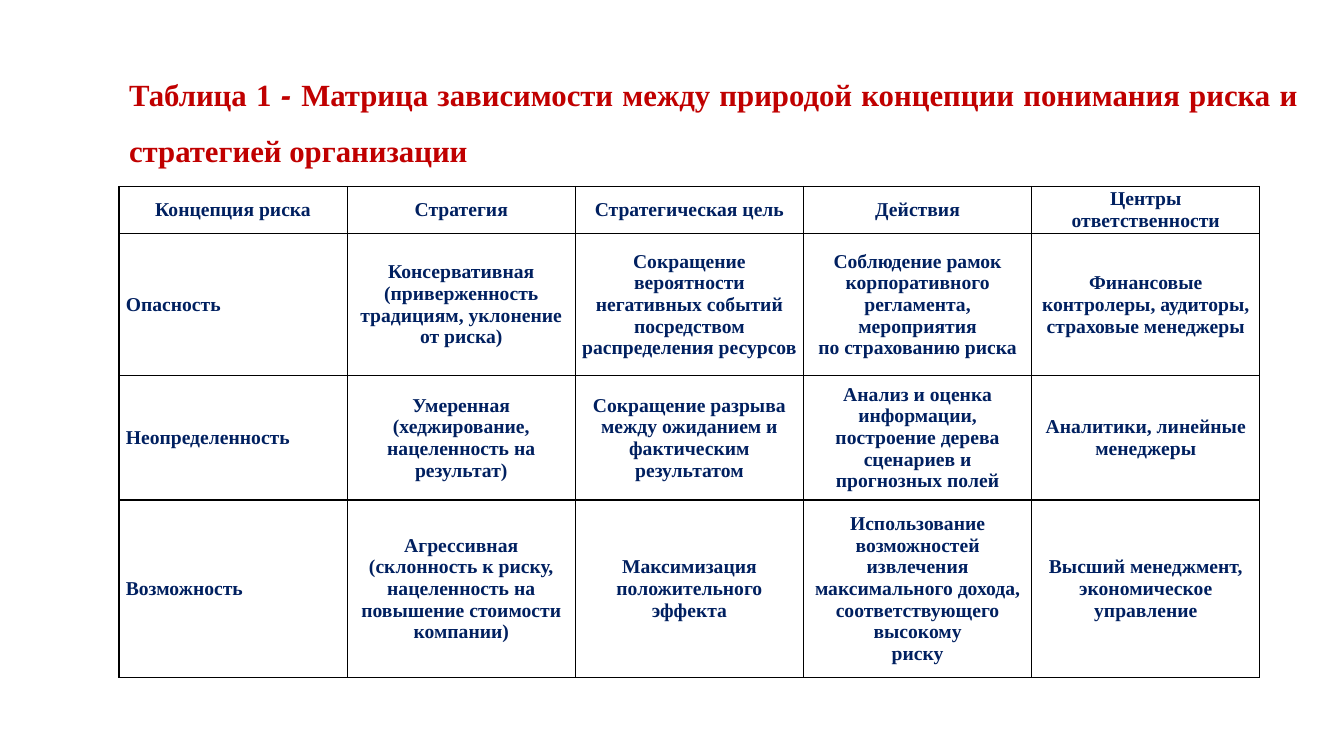
import pptx
import pptx.dml.color
import pptx.enum.text
import pptx.oxml.ns
import pptx.util
from lxml import etree
from pptx.util import Cm

SERIF = "Times New Roman"
RED, NAVY, BLACK = "C00000", "002060", "000000"

TITLE = [
    ("Таблица 1 ", {}),
    ("- ", {"font": "Arial", "italic": True}),
    ("Матрица зависимости между природой концепции понимания риска и стратегией организации", {}),
]

ROWS = [
    ["Концепция риска", "Стратегия", "Стратегическая цель", "Действия", "Центры ответственности"],
    [
        "Опасность",
        "Консервативная\n(приверженность традициям, уклонение от риска)",
        "Сокращение вероятности негативных событий посредством распределения ресурсов",
        "Соблюдение рамок корпоративного регламента, мероприятия\nпо страхованию риска",
        "Финансовые контролеры, аудиторы,\nстраховые менеджеры",
    ],
    [
        "Неопределенность",
        "Умеренная\n(хеджирование, нацеленность на результат)",
        "Сокращение разрыва между ожиданием и фактическим\nрезультатом",
        "Анализ и оценка информации, построение дерева сценариев и прогнозных полей",
        "Аналитики, линейные менеджеры",
    ],
    [
        "Возможность",
        "Агрессивная (склонность к риску, нацеленность на повышение стоимости компании)",
        "Максимизация положительного эффекта",
        "Использование возможностей извлечения максимального дохода,\n"
        "соответствующего высокому\nриску",
        "Высший менеджмент, экономическое управление",
    ],
]

LEFT, TABLE_TOP = Cm(3), Cm(4.7)
COLUMN_WIDTH = Cm(5.75)
ROW_HEIGHTS = [Cm(1.19), Cm(3.58), Cm(3.13), Cm(4.48)]


def color(value):
    return pptx.dml.color.RGBColor.from_string(value)


def add_text(paragraph, text, size=14, fill=NAVY, font=SERIF, italic=False):
    run = paragraph.add_run()
    run.text = text
    run.font.name = font
    run.font.size = pptx.util.Pt(size)
    run.font.bold = True
    run.font.italic = italic
    run.font.color.rgb = color(fill)


def add_borders(cell):
    properties = cell._tc.get_or_add_tcPr()
    for index, side in enumerate(("a:lnL", "a:lnR", "a:lnT", "a:lnB")):
        line = etree.Element(pptx.oxml.ns.qn(side), w=str(pptx.util.Pt(1)))
        fill = etree.SubElement(line, pptx.oxml.ns.qn("a:solidFill"))
        etree.SubElement(fill, pptx.oxml.ns.qn("a:srgbClr"), val=BLACK)
        properties.insert(index, line)


def fill_cell(cell, text, alignment):
    cell.fill.background()
    cell.vertical_anchor = pptx.enum.text.MSO_ANCHOR.MIDDLE
    cell.margin_left = cell.margin_right = Cm(0.17)
    cell.margin_top = cell.margin_bottom = 0
    for index, line in enumerate(text.split("\n")):
        frame = cell.text_frame
        paragraph = frame.add_paragraph() if index else frame.paragraphs[0]
        paragraph.alignment = alignment
        add_text(paragraph, line)
    add_borders(cell)


def add_title(slide):
    title = slide.shapes.title
    title.left, title.top, title.width, title.height = LEFT, Cm(1.32), Cm(29.95), Cm(2.9)
    frame = title.text_frame
    frame.word_wrap = True
    frame.auto_size = pptx.enum.text.MSO_AUTO_SIZE.SHAPE_TO_FIT_TEXT
    frame.vertical_anchor = pptx.enum.text.MSO_ANCHOR.TOP
    paragraph = frame.paragraphs[0]
    paragraph.alignment = pptx.enum.text.PP_ALIGN.JUSTIFY
    paragraph.line_spacing = 1.5
    for text, style in TITLE:
        add_text(paragraph, text, size=22, fill=RED, **style)


def add_matrix(slide):
    column_count = len(ROWS[0])
    table = slide.shapes.add_table(
        len(ROWS), column_count, LEFT, TABLE_TOP, COLUMN_WIDTH * column_count, sum(ROW_HEIGHTS)
    ).table
    table.horz_banding = False
    for column in table.columns:
        column.width = COLUMN_WIDTH
    for row_index, (height, texts) in enumerate(zip(ROW_HEIGHTS, ROWS)):
        table.rows[row_index].height = height
        for column_index, text in enumerate(texts):
            concept = row_index > 0 and column_index == 0
            alignment = pptx.enum.text.PP_ALIGN.LEFT if concept else pptx.enum.text.PP_ALIGN.CENTER
            fill_cell(table.cell(row_index, column_index), text, alignment)


def main():
    presentation = pptx.Presentation()
    presentation.slide_width, presentation.slide_height = Cm(33.87), Cm(19.05)
    slide = presentation.slides.add_slide(presentation.slide_layouts[5])
    add_title(slide)
    add_matrix(slide)
    presentation.save("out.pptx")


if __name__ == "__main__":
    main()
